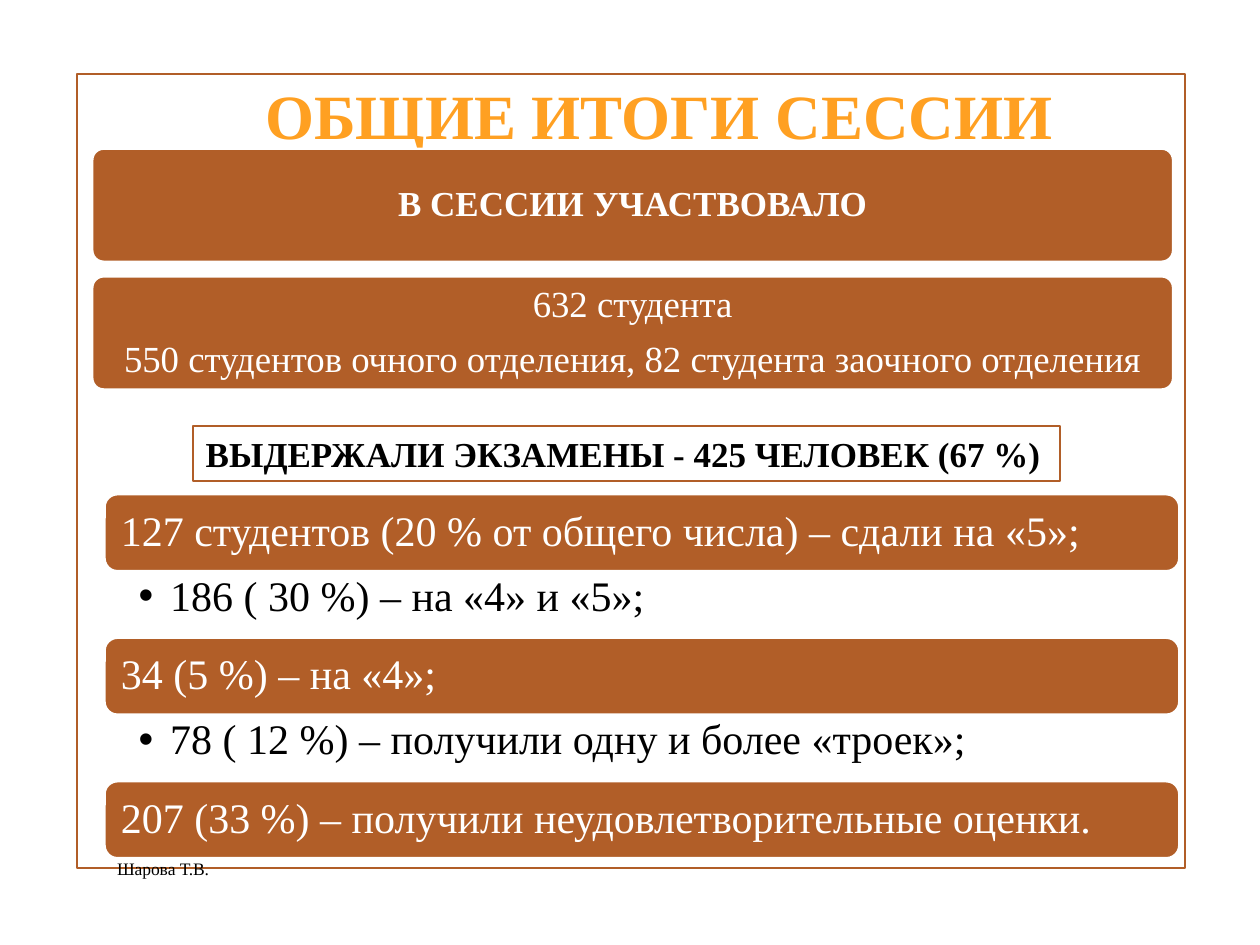
from dataclasses import dataclass

from lxml.etree import SubElement
from pptx import Presentation
from pptx.dml.color import RGBColor
from pptx.enum.shapes import MSO_SHAPE
from pptx.enum.text import MSO_ANCHOR, MSO_AUTO_SIZE, PP_ALIGN
from pptx.oxml.ns import qn
from pptx.util import Pt


@dataclass(frozen=True)
class Theme:
    font: str = "Times New Roman"
    brown: RGBColor = RGBColor(0xB1, 0x5E, 0x28)
    orange: RGBColor = RGBColor(0xFF, 0xA0, 0x22)
    white: RGBColor = RGBColor(0xFF, 0xFF, 0xFF)
    black: RGBColor = RGBColor(0, 0, 0)
    title_size: int = 36
    list_size: int = 24
    count_size: int = 21
    heading_size: int = 20
    author_size: int = 10


theme = Theme()


def write(shape, text, size, color=theme.black, bold=False, align=PP_ALIGN.LEFT,
          anchor=MSO_ANCHOR.TOP, margins=(7.2, 3.6, 7.2, 3.6), spacing=1.0,
          gap=0, bullet_indent=0):
    """Fill a shape with text; margins run left, top, right, bottom, in points."""
    frame = shape.text_frame
    frame.text = text
    frame.word_wrap = True
    frame.auto_size = MSO_AUTO_SIZE.NONE
    frame.vertical_anchor = anchor
    frame.margin_left, frame.margin_top, frame.margin_right, frame.margin_bottom = map(Pt, margins)
    for paragraph in frame.paragraphs:
        if bullet_indent:
            properties = paragraph._p.get_or_add_pPr()
            properties.set("marL", str(Pt(bullet_indent)))
            properties.set("indent", str(-Pt(bullet_indent)))
            SubElement(properties, qn("a:buChar")).set("char", "•")
        paragraph.alignment = align
        paragraph.line_spacing = spacing
        paragraph.space_before = Pt(0)
        paragraph.space_after = Pt(gap)
        paragraph.font.name = theme.font
        paragraph.font.size = Pt(size)
        paragraph.font.bold = bold
        paragraph.font.color.rgb = color
    frame.paragraphs[-1].space_after = Pt(0)


def add_panel(kind, left, top, width, height, fill, line):
    panel = slide.shapes.add_shape(kind, Pt(left), Pt(top), Pt(width), Pt(height))
    panel.shadow.inherit = False
    if fill is None:
        panel.fill.background()
    else:
        panel.fill.solid()
        panel.fill.fore_color.rgb = fill
    panel.line.color.rgb = line
    panel.line.width = Pt(1.25)
    return panel


deck = Presentation()
deck.slide_width, deck.slide_height = Pt(720), Pt(540)
slide = deck.slides.add_slide(deck.slide_layouts.get_by_name("Two Content"))
title, *list_items = slide.placeholders

# Frame and title
add_panel(MSO_SHAPE.RECTANGLE, 44, 42.5, 633, 453.5, None, theme.brown)
title.left, title.top, title.width, title.height = Pt(52.5), Pt(40.3), Pt(648), Pt(74)
write(title, "ОБЩИЕ ИТОГИ СЕССИИ", theme.title_size, theme.orange, bold=True,
      align=PP_ALIGN.CENTER)

# Participants
participants = [
    ("В СЕССИИ УЧАСТВОВАЛО", theme.heading_size, True),
    ("632 студента\n550 студентов очного отделения, 82 студента заочного отделения",
     theme.count_size, False),
]
for row, (text, size, bold) in enumerate(participants):
    bar = add_panel(MSO_SHAPE.ROUNDED_RECTANGLE, 52.8, 85 + 73 * row, 617.5, 64.5,
                    theme.brown, theme.white)
    bar.adjustments[0] = 0.1
    write(bar, text, size, theme.white, bold=bold, align=PP_ALIGN.CENTER,
          anchor=MSO_ANCHOR.MIDDLE, margins=(6, 6, 6, 6), spacing=0.9, gap=8.5)

# Passed exams
passed = add_panel(MSO_SHAPE.RECTANGLE, 110.5, 243.5, 495.5, 31.5, theme.white, theme.brown)
write(passed, "ВЫДЕРЖАЛИ ЭКЗАМЕНЫ - 425 ЧЕЛОВЕК (67 %)", theme.heading_size, bold=True)

# Grades: bars alternate with bulleted items
grade_left, grade_top, grade_width = 59.8, 282.5, 614
bar_height, item_height = 43.8, 38.2
pitch = bar_height + item_height
grade_bars = [
    "127 студентов (20 % от общего числа) – сдали на «5»;",
    "34 (5 %) – на «4»;",
    "207 (33 %) – получили неудовлетворительные оценки.",
]
grade_items = [
    "186 ( 30 %) – на «4» и «5»;",
    "78 ( 12 %) – получили одну и более «троек»;",
]
for row, text in enumerate(grade_bars):
    bar = add_panel(MSO_SHAPE.ROUNDED_RECTANGLE, grade_left, grade_top + pitch * row,
                    grade_width, bar_height, theme.brown, theme.white)
    write(bar, text, theme.list_size, theme.white, anchor=MSO_ANCHOR.MIDDLE,
          margins=(7.2, 7.2, 7.2, 7.2), spacing=0.9)
for row, (item, text) in enumerate(zip(list_items, grade_items)):
    item.left, item.top = Pt(grade_left), Pt(grade_top + bar_height + pitch * row)
    item.width, item.height = Pt(grade_width), Pt(item_height)
    write(item, text, theme.list_size, margins=(19.4, 2.2, 13.7, 2.2), spacing=0.9,
          bullet_indent=18)

# Author
author = slide.shapes.add_textbox(Pt(59.8), Pt(485.5), Pt(402), Pt(22))
write(author, "Шарова Т.В.", theme.author_size, anchor=MSO_ANCHOR.MIDDLE)

deck.save("out.pptx")
